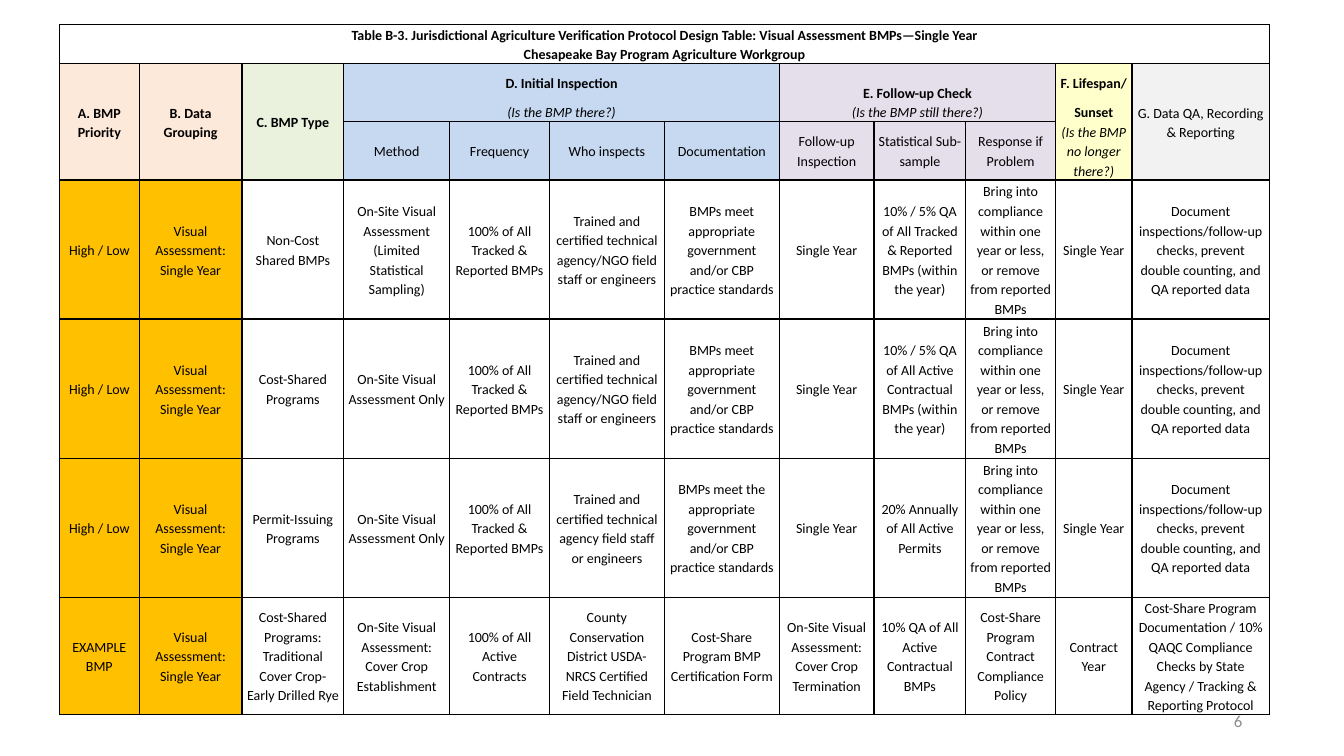
import pptx
import pptx.dml.color
import pptx.enum.text
import pptx.oxml.ns
import pptx.util
from lxml import etree

Inches = pptx.util.Inches
RGBColor = pptx.dml.color.RGBColor
ALIGN = pptx.enum.text.PP_ALIGN
ANCHOR = pptx.enum.text.MSO_ANCHOR

BLACK = RGBColor(0x00, 0x00, 0x00)
GRAY = RGBColor(0x8C, 0x8C, 0x8C)
PEACH = RGBColor(0xFD, 0xE9, 0xD9)
GREEN = RGBColor(0xEA, 0xF1, 0xDD)
BLUE = RGBColor(0xC6, 0xD9, 0xF1)
LILAC = RGBColor(0xE5, 0xDF, 0xEC)
YELLOW = RGBColor(0xFF, 0xFF, 0xCC)
SILVER = RGBColor(0xF2, 0xF2, 0xF2)
AMBER = RGBColor(0xFF, 0xC0, 0x00)

COLUMN_WIDTHS = [0.79, 1.02, 1.01, 1.05, 0.99, 1.14, 1.14, 0.94, 0.91, 0.89, 0.76, 1.36]
ROW_HEIGHTS = [0.39, 0.38, 0.17, 0.58, 1.38, 1.38, 1.38, 1.15]
LIFESPAN = 10  # column of the three stacked lifespan cells

TITLE = ("Table B-3. Jurisdictional Agriculture Verification Protocol Design Table: "
         "Visual Assessment BMPs—Single Year\nChesapeake Bay Program Agriculture Workgroup")

# Row, column, rows spanned, columns spanned, fill, text, format
BOLD, ITALIC = {"bold": True}, {"italic": True}
HEADINGS = [
    (0, 0, 1, 12, None, TITLE, BOLD),
    (1, 0, 3, 1, PEACH, "A. BMP Priority", BOLD),
    (1, 1, 3, 1, PEACH, "B. Data Grouping", BOLD),
    (1, 2, 3, 1, GREEN, "C. BMP Type", BOLD),
    (1, 3, 1, 4, BLUE, "D. Initial Inspection", BOLD),
    (1, 7, 1, 3, LILAC, "E. Follow-up Check", {"bold": True, "anchor": ANCHOR.BOTTOM}),
    (1, LIFESPAN, 1, 1, YELLOW, "F. Lifespan/", BOLD),
    (1, 11, 3, 1, SILVER, "G. Data QA, Recording & Reporting", {}),
    (2, 3, 1, 4, BLUE, "(Is the BMP there?)", ITALIC),
    (2, 7, 1, 3, LILAC, "(Is the BMP still there?)", {"italic": True, "anchor": ANCHOR.TOP}),
    (2, LIFESPAN, 1, 1, YELLOW, "Sunset", BOLD),
    (3, LIFESPAN, 1, 1, YELLOW, "(Is the BMP no longer there?)", ITALIC),
]
SUBHEADINGS = ["Method", "Frequency", "Who inspects", "Documentation",
               "Follow-up Inspection", "Statistical Sub-sample", "Response if Problem"]

GROUPING = "Visual Assessment: Single Year"
VISUAL_ONLY = "On-Site Visual Assessment Only"
ALL_TRACKED = "100% of All Tracked & Reported BMPs"
FIELD_STAFF = "Trained and certified technical agency/NGO field staff or engineers"
STANDARDS = "BMPs meet appropriate government and/or CBP practice standards"
COMPLIANCE = "Bring into compliance within one year or less, or remove from reported BMPs"
QA_RECORD = ("Document inspections/follow-up checks, prevent double counting, "
             "and QA reported data")
PRACTICES = [
    ["High / Low", GROUPING, "Non-Cost Shared BMPs",
     "On-Site Visual Assessment (Limited Statistical Sampling)", ALL_TRACKED,
     FIELD_STAFF, STANDARDS, "Single Year",
     "10% / 5% QA of All Tracked & Reported BMPs (within the year)",
     COMPLIANCE, "Single Year", QA_RECORD],
    ["High / Low", GROUPING, "Cost-Shared Programs", VISUAL_ONLY, ALL_TRACKED,
     FIELD_STAFF, STANDARDS, "Single Year",
     "10% / 5% QA of All Active Contractual BMPs (within the year)",
     COMPLIANCE, "Single Year", QA_RECORD],
    ["High / Low", GROUPING, "Permit-Issuing Programs", VISUAL_ONLY, ALL_TRACKED,
     "Trained and certified technical agency field staff or engineers",
     "BMPs meet the appropriate government and/or CBP practice standards",
     "Single Year", "20% Annually of All Active Permits",
     COMPLIANCE, "Single Year", QA_RECORD],
    ["EXAMPLE BMP", GROUPING,
     "Cost-Shared Programs: Traditional Cover Crop- Early Drilled Rye",
     "On-Site Visual Assessment: Cover Crop Establishment",
     "100% of All Active Contracts",
     "County Conservation District USDA-NRCS Certified Field Technician",
     "Cost-Share Program BMP Certification Form",
     "On-Site Visual Assessment: Cover Crop Termination",
     "10% QA of All Active Contractual BMPs",
     "Cost-Share Program Contract Compliance Policy", "Contract Year",
     "Cost-Share Program Documentation / 10% QAQC Compliance Checks by State "
     "Agency / Tracking & Reporting Protocol"],
]


def write_text(frame, text, size=10, color=BLACK, font="Calibri", bold=False,
               italic=False, align=ALIGN.CENTER, spacing=1.15):
    frame.word_wrap = True
    for index, line in enumerate(text.split("\n")):
        paragraph = frame.add_paragraph() if index else frame.paragraphs[0]
        paragraph.alignment = align
        paragraph.line_spacing = spacing
        run = paragraph.add_run()
        run.text = line
        run.font.name = font
        run.font.size = pptx.util.Pt(size)
        run.font.bold = bold
        run.font.italic = italic
        run.font.color.rgb = color


class ProtocolSlide:
    """Holds the slide and the common style of its cells."""

    def __init__(self, slide, border=1, side_margin=0.04):
        self.slide = slide
        self.border = pptx.util.Pt(border)
        self.side_margin = Inches(side_margin)

    def grid(self, left, top, widths, heights):
        frame = self.slide.shapes.add_table(
            len(heights), len(widths), Inches(left), Inches(top),
            Inches(sum(widths)), Inches(sum(heights)))
        table = frame.table
        table.first_row = table.horz_banding = False
        for column, width in zip(table.columns, widths):
            column.width = Inches(width)
        for row, height in zip(table.rows, heights):
            row.height = Inches(height)
        return table

    def borders(self, cell, open_sides=""):
        properties = cell._tc.get_or_add_tcPr()
        for side in "LRTB":
            line = etree.SubElement(properties, pptx.oxml.ns.qn("a:ln" + side),
                                    w=str(self.border))
            if side in open_sides:
                etree.SubElement(line, pptx.oxml.ns.qn("a:noFill"))
            else:
                solid = etree.SubElement(line, pptx.oxml.ns.qn("a:solidFill"))
                etree.SubElement(solid, pptx.oxml.ns.qn("a:srgbClr"), val=str(BLACK))

    def cell(self, cell, text, fill=None, anchor=ANCHOR.MIDDLE, **style):
        cell.margin_left = cell.margin_right = self.side_margin
        cell.margin_top = cell.margin_bottom = 0
        cell.vertical_anchor = anchor
        if fill is None:
            cell.fill.background()
        else:
            cell.fill.solid()
            cell.fill.fore_color.rgb = fill
        write_text(cell.text_frame, text, **style)

    def label(self, left, top, width, height, text, **style):
        box = self.slide.shapes.add_textbox(
            Inches(left), Inches(top), Inches(width), Inches(height))
        box.text_frame.vertical_anchor = ANCHOR.MIDDLE
        write_text(box.text_frame, text, **style)


def main():
    deck = pptx.Presentation()
    deck.slide_width, deck.slide_height = Inches(13.33), Inches(7.5)
    page = ProtocolSlide(deck.slides.add_slide(deck.slide_layouts[6]))
    protocol = page.grid(0.59, 0.24, COLUMN_WIDTHS, ROW_HEIGHTS)

    # Borders, left open between the stacked heading cells
    for row in range(len(ROW_HEIGHTS)):
        for column in range(len(COLUMN_WIDTHS)):
            open_sides = ""
            if 3 <= column <= LIFESPAN:
                last_stacked = 3 if column == LIFESPAN else 2
                open_sides += "B" if 1 <= row < last_stacked else ""
                open_sides += "T" if 1 < row <= last_stacked else ""
            page.borders(protocol.cell(row, column), open_sides)

    # Headings
    for row, column, rows, columns, fill, text, style in HEADINGS:
        heading = protocol.cell(row, column)
        if rows * columns > 1:
            heading.merge(protocol.cell(row + rows - 1, column + columns - 1))
        page.cell(heading, text, fill, **style)
    for column, text in enumerate(SUBHEADINGS, start=3):
        page.cell(protocol.cell(3, column), text, BLUE if column < 7 else LILAC)

    # Practices
    for row, practice in enumerate(PRACTICES, start=4):
        for column, text in enumerate(practice):
            page.cell(protocol.cell(row, column), text, AMBER if column < 2 else None)

    # Page number
    page.label(9.42, 6.95, 3, 0.4, "6", size=12, color=GRAY, align=ALIGN.RIGHT, spacing=1)
    deck.save("out.pptx")


if __name__ == "__main__":
    main()
